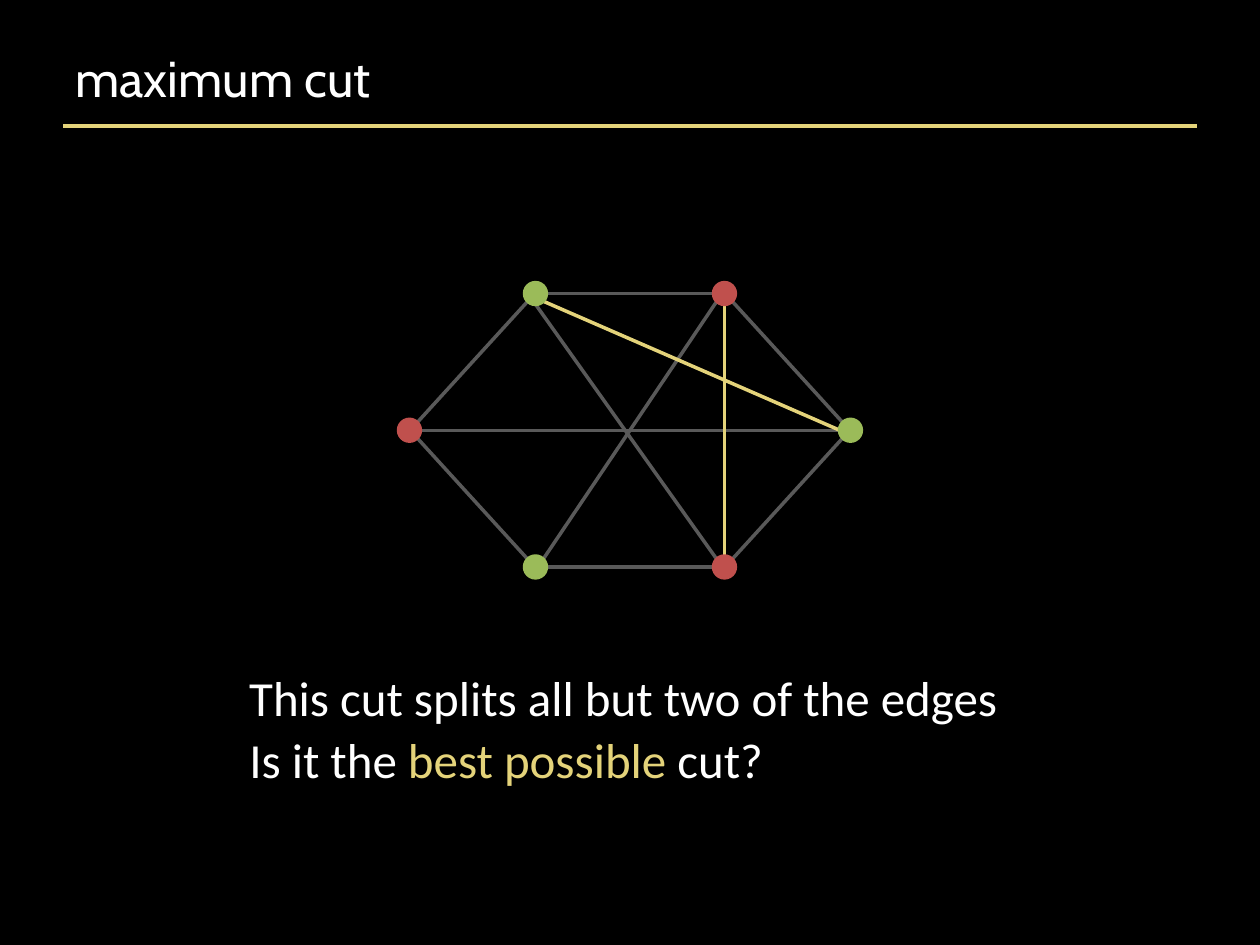
"""Build the maximum cut slide: a title, a two-coloured graph and a question."""
import math

from pptx import Presentation
from pptx import util as u
from pptx.dml.color import RGBColor
from pptx.enum import shapes, text
from pptx.oxml import ns, xmlchemy

COLORS = {"back": "000000", "text": "FFFFFF", "accent": "E4D37A",
          "edge": "595959", "green": "9BBB59", "red": "C0504D"}
DOT = 0.17
ANGLES = {"right": 0, "lower right": 45, "bottom": 90, "lower left": 135,
          "left": 180, "upper left": 225, "top": 270, "upper right": 315}
NODES = {
    "NW": (2 / 7, 0, "green"), "NE": (5 / 7, 0, "red"),
    "W": (0, 0.5, "red"), "E": (1, 0.5, "green"),
    "SW": (2 / 7, 1, "green"), "SE": (5 / 7, 1, "red"),
}
EDGES = [
    ("W", "upper right", "NW", "lower left", "edge"),
    ("W", "right", "E", "left", "edge"),
    ("NE", "lower left", "SW", "upper right", "edge"),
    ("SW", "right", "SE", "left", "edge"),
    ("NW", "right", "NE", "left", "edge"),
    ("W", "lower right", "SW", "upper left", "edge"),
    ("NE", "lower right", "E", "upper left", "edge"),
    ("NW", "bottom", "SE", "upper left", "edge"),
    ("SE", "upper right", "E", "lower left", "edge"),
    ("NW", "lower right", "E", "left", "accent"),
    ("NE", "bottom", "SE", "top", "accent"),
]
QUESTION = [
    (6.2, [("This cut splits all but two of the edges", "text")]),
    (4.32, [("Is it the ", "text"), ("best possible", "accent"), (" cut?", "text")]),
]


def rgb(name):
    """Return the named colour."""
    return RGBColor.from_string(COLORS[name])


def set_attrs(obj, values):
    """Set each attribute of obj from a dict."""
    for name, value in values.items():
        setattr(obj, name, value)


def add_run(p, words, size, font, color):
    """Append a formatted run to a paragraph."""
    r = p.add_run()
    r.text = words
    set_attrs(r.font, {"size": u.Pt(size), "name": font})
    r.font.color.rgb = rgb(color)


def add_line(s, start, end, color):
    """Draw a straight line between two points."""
    points = [u.Inches(v) for v in (*start, *end)]
    sp = s.shapes.add_connector(shapes.MSO_CONNECTOR.STRAIGHT, *points)
    sp.line.color.rgb = rgb(color)
    sp.line.width = u.Pt(2)
    sp._element.spPr.append(xmlchemy.OxmlElement("a:effectLst"))


def add_title(s, left, top, width, height):
    """Place the title in its box, with a rule below it."""
    sp = s.shapes.title
    set_attrs(sp, {"left": u.Inches(left), "top": u.Inches(top),
                   "width": u.Inches(width), "height": u.Inches(height)})
    tf = sp.text_frame
    tf.vertical_anchor = text.MSO_ANCHOR.MIDDLE
    p = tf.paragraphs[0]
    p.alignment = text.PP_ALIGN.LEFT
    add_run(p, "maximum cut", 28.8, "Cabin", "text")
    rule = top + height + 0.08
    add_line(s, (left, rule), (left + width, rule), "accent")


def add_graph(s, left, top, width, height):
    """Draw the edges and nodes, with node centres spread over the box."""
    centres = {name: (left + width * fx, top + height * fy)
               for name, (fx, fy, _) in NODES.items()}

    def site(node, side):
        x, y = centres[node]
        angle = math.radians(ANGLES[side])
        return x + DOT / 2 * math.cos(angle), y + DOT / 2 * math.sin(angle)

    for a, a_side, b, b_side, color in EDGES:
        add_line(s, site(a, a_side), site(b, b_side), color)
    for name, (x, y) in centres.items():
        box = [u.Inches(v) for v in (x - DOT / 2, y - DOT / 2, DOT, DOT)]
        sp = s.shapes.add_shape(shapes.MSO_SHAPE.OVAL, *box)
        sp.shadow.inherit = False
        sp.fill.solid()
        sp.fill.fore_color.rgb = sp.line.color.rgb = rgb(NODES[name][2])
        sp.line.width = u.Pt(2.25)


def add_question(s, left, top, pitch, height):
    """Stack the lines of text below the graph."""
    for i, (width, runs) in enumerate(QUESTION):
        box = [u.Inches(v) for v in (left, top + i * pitch, width, height)]
        tf = s.shapes.add_textbox(*box).text_frame
        set_attrs(tf, {"word_wrap": False,
                       "auto_size": text.MSO_AUTO_SIZE.SHAPE_TO_FIT_TEXT})
        for words, color in runs:
            add_run(tf.paragraphs[0], words, 28, "Calibri", color)


def main():
    """Build and save the slide."""
    prs = Presentation()
    set_attrs(prs, {"slide_width": u.Inches(10), "slide_height": u.Inches(7.5)})
    s = prs.slides.add_slide(prs.slide_layouts[5])
    s.background.fill.solid()
    s.background.fill.fore_color.rgb = rgb("back")
    add_title(s, 0.5, 0.3, 9, 0.62)
    add_graph(s, 3.25, 2.33, 3.5, 2.17)
    add_question(s, 1.88, 5.25, 0.49, 0.57)
    prs.save("out.pptx")


if __name__ == "__main__":
    main()
